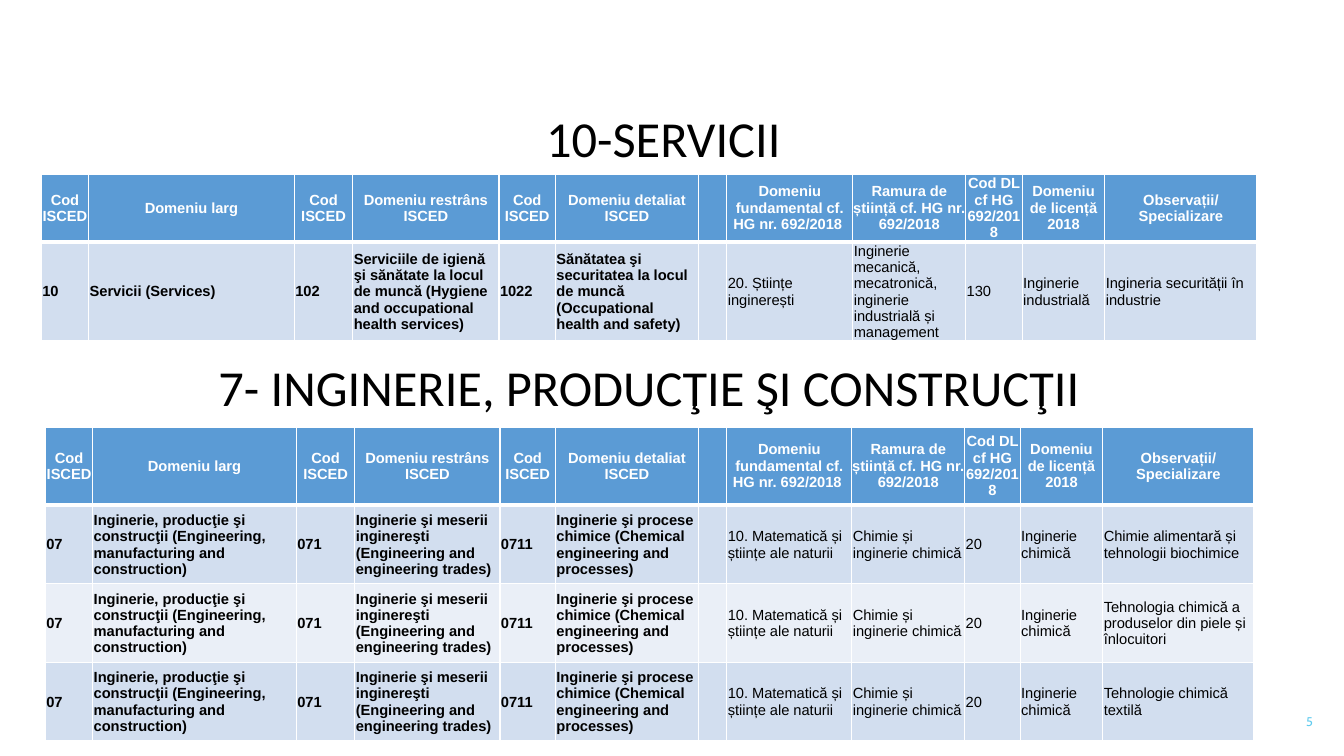
import pptx
import pptx.util
import pptx.dml.color
import pptx.enum.text
import pptx.oxml
import pptx.oxml.ns
from lxml import etree

Inches = pptx.util.Inches
Pt = pptx.util.Pt
Align = pptx.enum.text.PP_ALIGN
Anchor = pptx.enum.text.MSO_ANCHOR

COLORS = {
    "header": "5B9BD5",
    "band_dark": "D2DEEF",
    "band_light": "EAEFF7",
    "white": "FFFFFF",
    "black": "000000",
    "page": "5FCBEF",
}
HEADERS = [
    "Cod ISCED", "Domeniu larg", "Cod ISCED", "Domeniu restrâns ISCED",
    "Cod ISCED", "Domeniu detaliat ISCED", "",
    "Domeniu fundamental cf. HG nr. 692/2018 ",
    "Ramura de știință cf. HG nr. 692/2018", "Cod DL cf HG 692/2018",
    "Domeniu de licență 2018", "Observații/ Specializare",
]
SPACER_COLUMN = HEADERS.index("")
SERVICES = [[
    "10", "Servicii (Services)", "102",
    "Serviciile de igienă şi sănătate la locul de muncă (Hygiene and occupational health services)",
    "1022",
    "Sănătatea şi securitatea la locul de muncă (Occupational health and safety)",
    "", "20. Științe inginerești",
    "Inginerie mecanică, mecatronică, inginerie industrială și management",
    "130", "Inginerie industrială", "Ingineria securității în industrie",
]]
CHEMISTRY = [
    "07",
    "Inginerie, producţie şi construcţii (Engineering, manufacturing and construction)",
    "071", "Inginerie şi meserii inginereşti (Engineering and engineering trades)",
    "0711", "Inginerie şi procese chimice (Chemical engineering and processes)",
    "", "10. Matematică și științe ale naturii", "Chimie și inginerie chimică",
    "20", "Inginerie chimică",
]
SPECIALIZATIONS = [
    "Chimie alimentară și tehnologii biochimice",
    "Tehnologia chimică a produselor din piele și înlocuitori",
    "Tehnologie chimică textilă",
]
SERVICES_COLUMNS = [0.47, 2.04, 0.58, 1.45, 0.56, 1.42, 0.28, 1.25, 1.12, 0.56, 0.82, 1.51]
ENGINEERING_COLUMNS = [0.47, 2.02, 0.58, 1.44, 0.55, 1.42, 0.28, 1.24, 1.12, 0.55, 0.82, 1.5]


def rgb(name):
    return pptx.dml.color.RGBColor.from_string(COLORS[name])


def write_text(text_frame, text, size=10.5, font="Arial", color="black",
               bold=False, align=Align.LEFT, line_spacing=None):
    paragraph = text_frame.paragraphs[0]
    paragraph.alignment = align
    if line_spacing:
        paragraph.line_spacing = line_spacing
    run = paragraph.add_run()
    run.text = text
    run.font.size = Pt(size)
    run.font.name = font
    run.font.bold = bold
    run.font.color.rgb = rgb(color)


def place_text(shape, text, left, top, width, height, **text_format):
    shape.left, shape.top = Inches(left), Inches(top)
    shape.width, shape.height = Inches(width), Inches(height)
    text_frame = shape.text_frame
    text_frame.auto_size = pptx.enum.text.MSO_AUTO_SIZE.NONE
    text_frame.word_wrap = True
    text_frame.vertical_anchor = Anchor.MIDDLE
    write_text(text_frame, text, **text_format)


def add_text(slide, *text_and_place, **text_format):
    shape = slide.shapes.add_textbox(0, 0, 0, 0)
    place_text(shape, *text_and_place, **text_format)


def set_borders(cell, **widths):
    properties = cell._tc.get_or_add_tcPr()
    for side in "LRTB":
        line = etree.SubElement(properties, pptx.oxml.ns.qn(f"a:ln{side}"),
                                w=str(Pt(widths.get(side, 1))))
        fill = etree.SubElement(line, pptx.oxml.ns.qn("a:solidFill"))
        etree.SubElement(fill, pptx.oxml.ns.qn("a:srgbClr"), val=COLORS["white"])


def format_cell(cell, text, row, column):
    is_header = row == 0
    set_borders(cell, B=3 if is_header else 1, T=3 if row == 1 else 1)
    cell.fill.solid()
    band = "band_dark" if row % 2 else "band_light"
    cell.fill.fore_color.rgb = rgb("header" if is_header else band)
    cell.vertical_anchor = Anchor.MIDDLE
    inset = Inches(0 if is_header else 0.01)
    cell.margin_left = cell.margin_right = cell.margin_top = inset
    cell.margin_bottom = 0
    if text:
        write_text(cell.text_frame, text,
                   color="white" if is_header else "black",
                   bold=is_header or column < SPACER_COLUMN,
                   align=Align.CENTER if is_header else Align.LEFT)


def add_domain_table(slide, left, top, column_widths, header_height, row_height, records):
    rows = [HEADERS] + records
    heights = [header_height] + [row_height] * len(records)
    table = slide.shapes.add_table(
        len(rows), len(HEADERS), Inches(left), Inches(top),
        Inches(sum(column_widths)), Inches(sum(heights))).table
    for column, width in zip(table.columns, column_widths):
        column.width = Inches(width)
    for row, height in zip(table.rows, heights):
        row.height = Inches(height)
    for row, texts in enumerate(rows):
        for column, text in enumerate(texts):
            format_cell(table.cell(row, column), text, row, column)


def main():
    presentation = pptx.Presentation()
    presentation.slide_width = Inches(13.33)
    presentation.slide_height = Inches(7.5)
    slide = presentation.slides.add_slide(presentation.slide_layouts[5])
    heading = dict(size=36, font="Calibri", align=Align.CENTER, line_spacing=0.9)

    engineering = [CHEMISTRY + [name] for name in SPECIALIZATIONS]
    add_domain_table(slide, 0.45, 4.24, ENGINEERING_COLUMNS, 0.77, 0.78, engineering)
    add_text(slide, "5", 10.12, 6.96, 3, 0.4,
             size=9, font="Cabin", color="page", align=Align.RIGHT)
    add_text(slide, "10-SERVICII", 0.83, 1.04, 11.5, 0.72, **heading)
    add_domain_table(slide, 0.41, 1.73, SERVICES_COLUMNS, 0.67, 0.98, SERVICES)
    place_text(slide.shapes.title, "7- INGINERIE, PRODUCŢIE ŞI CONSTRUCŢII",
               0.69, 3.51, 11.5, 0.72, **heading)
    presentation.save("out.pptx")


if __name__ == "__main__":
    main()
